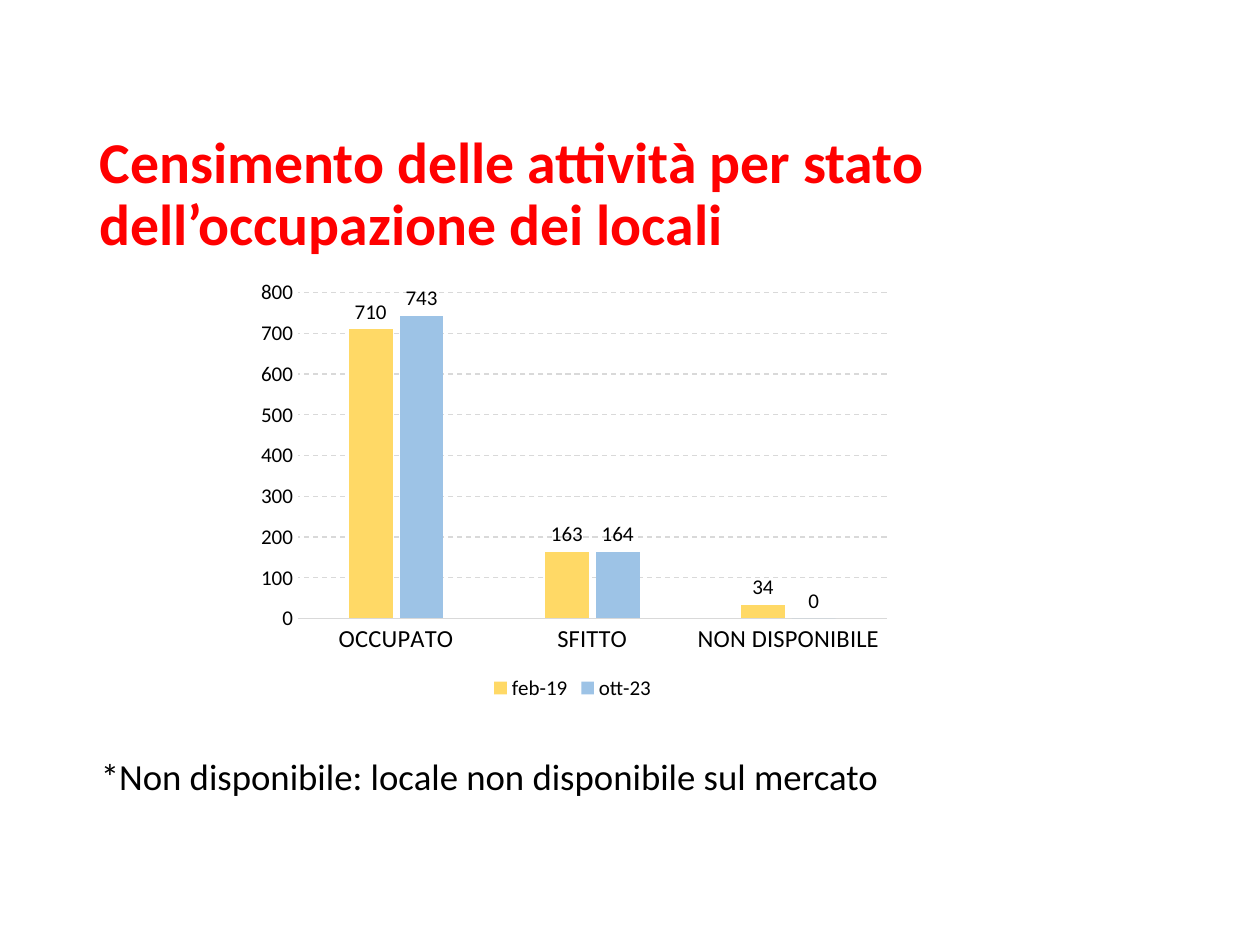
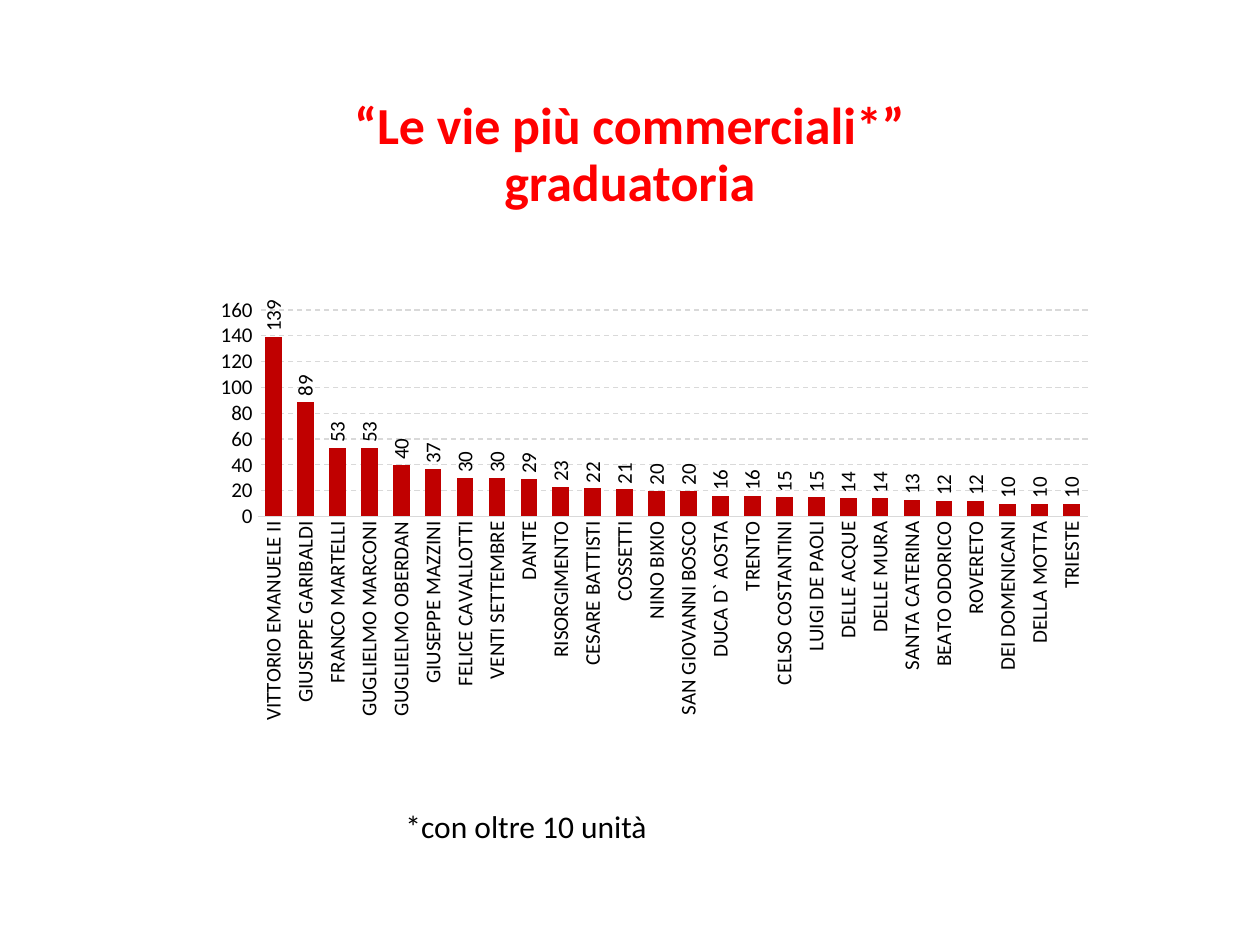
from lxml.etree import SubElement
from pptx import Presentation
from pptx.chart.data import CategoryChartData
from pptx.dml.color import RGBColor
from pptx.enum.chart import XL_CHART_TYPE, XL_LABEL_POSITION, XL_LEGEND_POSITION, XL_TICK_MARK
from pptx.enum.dml import MSO_LINE
from pptx.enum.text import MSO_ANCHOR, MSO_AUTO_SIZE, PP_ALIGN
from pptx.oxml.ns import qn
from pptx.util import Inches, Pt

FONT = "Calibri"
COLORS = {
    "title": "FF0000",
    "text": "000000",
    "grid": "D9D9D9",
    "february": "FFD966",
    "october": "9DC3E6",
    "streets": "C00000",
}
STREETS = {
    "VITTORIO EMANUELE II": 139,
    "GIUSEPPE GARIBALDI": 89,
    "FRANCO MARTELLI": 53,
    "GUGLIELMO MARCONI": 53,
    "GUGLIELMO OBERDAN": 40,
    "GIUSEPPE MAZZINI": 37,
    "FELICE CAVALLOTTI": 30,
    "VENTI SETTEMBRE": 30,
    "DANTE": 29,
    "RISORGIMENTO": 23,
    "CESARE BATTISTI": 22,
    "COSSETTI": 21,
    "NINO BIXIO": 20,
    "SAN GIOVANNI BOSCO": 20,
    "DUCA D` AOSTA": 16,
    "TRENTO": 16,
    "CELSO COSTANTINI": 15,
    "LUIGI DE PAOLI": 15,
    "DELLE ACQUE": 14,
    "DELLE MURA": 14,
    "SANTA CATERINA": 13,
    "BEATO ODORICO": 12,
    "ROVERETO": 12,
    "DEI DOMENICANI": 10,
    "DELLA MOTTA": 10,
    "TRIESTE": 10,
}


def color(name):
    return RGBColor.from_string(COLORS[name])


def style_font(font, size, name="text", bold=False):
    font.name = FONT
    font.size = Pt(size)
    font.bold = bold
    font.color.rgb = color(name)


def place(shape, left, top, width, height):
    shape.left, shape.top = Inches(left), Inches(top)
    shape.width, shape.height = Inches(width), Inches(height)


def set_title(page, text, area, size, alignment):
    title = page.shapes.title
    place(title, *area)
    frame = title.text_frame
    frame.text = text
    frame.auto_size = MSO_AUTO_SIZE.NONE
    frame.vertical_anchor = MSO_ANCHOR.MIDDLE
    paragraph = frame.paragraphs[0]
    paragraph.alignment = alignment
    paragraph.line_spacing = 0.9
    style_font(paragraph.font, size, "title", True)


def set_body(page, text, area, size):
    body = page.placeholders[1]
    place(body, *area)
    frame = body.text_frame
    frame.text = text
    frame.auto_size = MSO_AUTO_SIZE.NONE
    paragraph = frame.paragraphs[0]
    properties = paragraph._p.get_or_add_pPr()
    properties.set("marL", str(Inches(0.19)))
    properties.set("indent", str(Inches(-0.19)))
    SubElement(properties, qn("a:buNone"))
    paragraph.line_spacing = 0.9
    paragraph.space_before = Pt(0)
    style_font(paragraph.font, size)


def add_note(page, text, area, size):
    box = page.shapes.add_textbox(*map(Inches, area))
    frame = box.text_frame
    frame.word_wrap = True
    frame.text = text
    style_font(frame.paragraphs[0].font, size)


def turn_upright(element):
    body = element.find(".//" + qn("a:bodyPr"))
    body.set("rot", "-5400000")
    body.set("vert", "horz")


def set_plot_area(chart, fractions):
    plot_area = chart._chartSpace.chart.plotArea
    layout = plot_area.find(qn("c:layout"))
    if layout is None:
        layout = SubElement(plot_area, qn("c:layout"))
        plot_area.insert(0, layout)
    manual = SubElement(layout, qn("c:manualLayout"))
    settings = [("layoutTarget", "inner"), ("xMode", "edge"), ("yMode", "edge")]
    settings += zip("xywh", fractions)
    for tag, value in settings:
        SubElement(manual, qn("c:" + tag)).set("val", str(value))


def style_axes(chart, category_size, maximum, step):
    categories, values = chart.category_axis, chart.value_axis
    for axis, size in ((categories, category_size), (values, 12)):
        axis.major_tick_mark = axis.minor_tick_mark = XL_TICK_MARK.NONE
        style_font(axis.tick_labels.font, size)
    values.minimum_scale, values.maximum_scale, values.major_unit = 0, maximum, step
    values.format.line.fill.background()
    grid = values.major_gridlines.format.line
    for line in (categories.format.line, grid):
        line.color.rgb = color("grid")
        line.width = Pt(0.75)
    grid.dash_style = MSO_LINE.DASH


def add_columns(page, area, categories, series, plot_area, gap, overlap,
                category_size, maximum, step, upright=False, legend=False):
    data = CategoryChartData()
    data.categories = categories
    for name, values, _ in series:
        data.add_series(name, values)
    frame = page.shapes.add_chart(
        XL_CHART_TYPE.COLUMN_CLUSTERED, *map(Inches, area), data)
    chart = frame.chart
    style_font(chart.font, 10)
    chart.has_title = False
    chart.has_legend = legend
    if legend:
        chart.legend.position = XL_LEGEND_POSITION.BOTTOM
        chart.legend.include_in_layout = False
        style_font(chart.legend.font, 12)
    set_plot_area(chart, plot_area)
    style_axes(chart, category_size, maximum, step)
    plot = chart.plots[0]
    plot.vary_by_categories = False
    plot.gap_width, plot.overlap = gap, overlap
    for columns, (_, _, fill) in zip(plot.series, series):
        columns.format.fill.solid()
        columns.format.fill.fore_color.rgb = color(fill)
        labels = columns.data_labels
        labels.show_value = True
        labels.position = XL_LABEL_POSITION.OUTSIDE_END
        style_font(labels.font, 12)
        if upright:
            turn_upright(labels._element)
    if upright:
        turn_upright(chart.category_axis._element.find(qn("c:txPr")).getparent())


def build_occupancy(deck):
    page = deck.slides.add_slide(deck.slide_layouts[1])
    set_title(page, "Censimento delle attività per stato dell’occupazione dei locali",
              (0.69, 0.83, 8.74, 1.45), 33, PP_ALIGN.LEFT)
    set_body(page, "*Non disponibile: locale non disponibile sul mercato",
             (0.7, 5.97, 8.61, 0.78), 21)
    add_columns(page, (1.95, 2.15, 5.19, 3.45),
                ["OCCUPATO", "SFITTO", "NON DISPONIBILE"],
                [("feb-19", [710, 163, 34], "february"),
                 ("ott-23", [743, 164, 0], "october")],
                (0.08, 0.05, 0.9, 0.75), gap=232, overlap=-16,
                category_size=14, maximum=800, step=100, legend=True)


def build_streets(deck):
    page = deck.slides.add_slide(deck.slide_layouts[5])
    set_title(page, "“Le vie più commerciali*”\vgraduatoria",
              (0.69, 0.83, 8.62, 0.82), 29.7, PP_ALIGN.CENTER)
    add_note(page, "*con oltre 10 unità", (3.12, 6.36, 4.23, 0.4), 18)
    add_columns(page, (1.61, 2.06, 7.24, 4), list(STREETS),
                [("Series 1", list(STREETS.values()), "streets")],
                (0.06, 0.1, 0.91, 0.41), gap=91, overlap=18,
                category_size=12, maximum=160, step=20, upright=True)


def main():
    deck = Presentation()
    deck.slide_width, deck.slide_height = Inches(10), Inches(7.5)
    build_occupancy(deck)
    build_streets(deck)
    deck.save("out.pptx")


if __name__ == "__main__":
    main()
